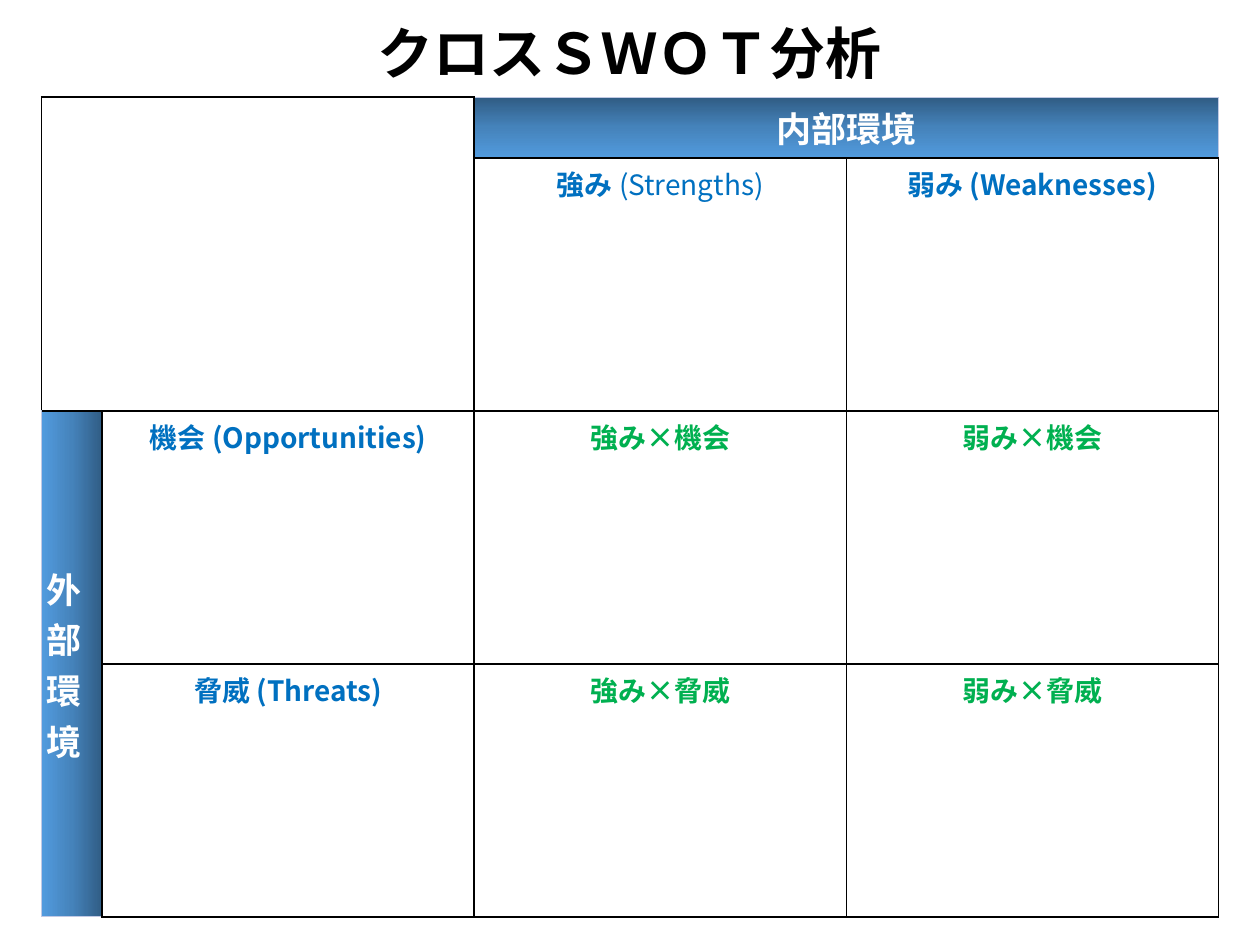
from lxml import etree
from pptx import Presentation
from pptx.dml.color import RGBColor
from pptx.enum.text import MSO_ANCHOR, PP_ALIGN
from pptx.oxml.ns import qn
from pptx.util import Cm, Pt

MID, TOP = MSO_ANCHOR.MIDDLE, MSO_ANCHOR.TOP
LEFT, CENTER = PP_ALIGN.LEFT, PP_ALIGN.CENTER

FONT = "Noto Sans CJK JP"
BLACK, WHITE, PALE = "000000", "FFFFFF", "C1C9E4"
BLUE, GREEN = "0070C0", "00B050"
STOPS = [(0, "305C84"), (50, "4583BB"), (100, "529BDE")]

TITLE = "クロスＳＷＯＴ分析"
COLS = [1.22, 7.5, 7.5, 7.5]
ROWS = [1.2, 5.1, 5.1, 5.1]
MERGES = [((0, 0), (1, 1)), ((0, 2), (0, 3)), ((2, 0), (3, 0))]
HEADS = {
    (0, 2): ("内部環境", CENTER, 90, "TRB"),
    (2, 0): ("外部環境", LEFT, 180, "LBR"),
}
PALES = {(0, 2): "TR", (2, 0): "LB"}
TOPICS = {
    (1, 2): (BLUE, [("強み ", True), ("(Strengths)", False)]),
    (1, 3): (BLUE, [("弱み (Weaknesses)", True)]),
    (2, 1): (BLUE, [("機会 (Opportunities)", True)]),
    (2, 2): (GREEN, [("強み×機会", True)]),
    (2, 3): (GREEN, [("弱み×機会", True)]),
    (3, 1): (BLUE, [("脅威 (Threats)", True)]),
    (3, 2): (GREEN, [("強み×脅威", True)]),
    (3, 3): (GREEN, [("弱み×脅威", True)]),
}


def rgb(code):
    return RGBColor.from_string(code)


def sub(node, tag, **attrs):
    return etree.SubElement(node, qn(tag), attrs)


def write(para, runs, size, color, align):
    para.alignment = align
    for text, bold in runs:
        run = para.add_run()
        run.text = text
        font = run.font
        font.size = Pt(size)
        font.bold = bold
        font.color.rgb = rgb(color)
        font.name = FONT
        sub(run._r.get_or_add_rPr(), "a:ea", typeface=FONT)


def edge(cell, pales):
    props = cell._tc.get_or_add_tcPr()
    for side in "LRTB":
        pale = side in pales
        line = sub(props, "a:ln" + side, w=str(Pt(0.5 if pale else 1)))
        fill = sub(line, "a:solidFill")
        sub(fill, "a:srgbClr", val=PALE if pale else BLACK)


def shade(cell, angle):
    grad = sub(cell._tc.get_or_add_tcPr(), "a:gradFill", rotWithShape="1")
    stops = sub(grad, "a:gsLst")
    for pos, color in STOPS:
        stop = sub(stops, "a:gs", pos=str(pos * 1000))
        sub(stop, "a:srgbClr", val=color)
    sub(grad, "a:lin", ang=str(angle * 60000), scaled="0")


def add_title(slide):
    title = slide.shapes.title
    title.left, title.top = Cm(5.41), Cm(0.3)
    title.width, title.height = Cm(14.58), Cm(1.63)
    frame = title.text_frame
    frame.word_wrap = True
    frame.vertical_anchor = MID
    frame.margin_top, frame.margin_bottom = 0, Cm(0.13)
    write(frame.paragraphs[0], [(TITLE, True)], 32, BLACK, CENTER)


def add_grid(slide):
    frame = slide.shapes.add_table(
        len(ROWS), len(COLS), Cm(0.84), Cm(1.96), Cm(sum(COLS)), Cm(sum(ROWS)))
    table = frame.table
    table.first_row = table.horz_banding = False
    for col, width in zip(table.columns, COLS):
        col.width = Cm(width)
    for row, height in zip(table.rows, ROWS):
        row.height = Cm(height)

    owner = {}
    for first, last in MERGES:
        table.cell(*first).merge(table.cell(*last))
        for r in range(first[0], last[0] + 1):
            for c in range(first[1], last[1] + 1):
                owner[r, c] = first

    for r in range(len(ROWS)):
        for c in range(len(COLS)):
            cell, key = table.cell(r, c), owner.get((r, c), (r, c))
            cell.margin_left = cell.margin_right = Cm(0.1)
            cell.margin_top = cell.margin_bottom = Cm(0.1)
            edge(cell, PALES.get(key, ""))
            para = cell.text_frame.paragraphs[0]
            if key in HEADS:
                text, align, angle = HEADS[key][:3]
                cell.vertical_anchor = MID
                shade(cell, angle)
                if key == (r, c):
                    write(para, [(text, True)], 20, WHITE, align)
                continue
            cell.vertical_anchor = TOP
            cell.fill.solid()
            cell.fill.fore_color.rgb = rgb(WHITE)
            if key in TOPICS:
                color, runs = TOPICS[key]
                write(para, runs, 16, color, CENTER)


def main():
    deck = Presentation()
    deck.slide_width, deck.slide_height = Cm(25.4), Cm(19.05)
    slide = deck.slides.add_slide(deck.slide_layouts[5])
    add_grid(slide)
    add_title(slide)
    deck.save("out.pptx")


if __name__ == "__main__":
    main()
